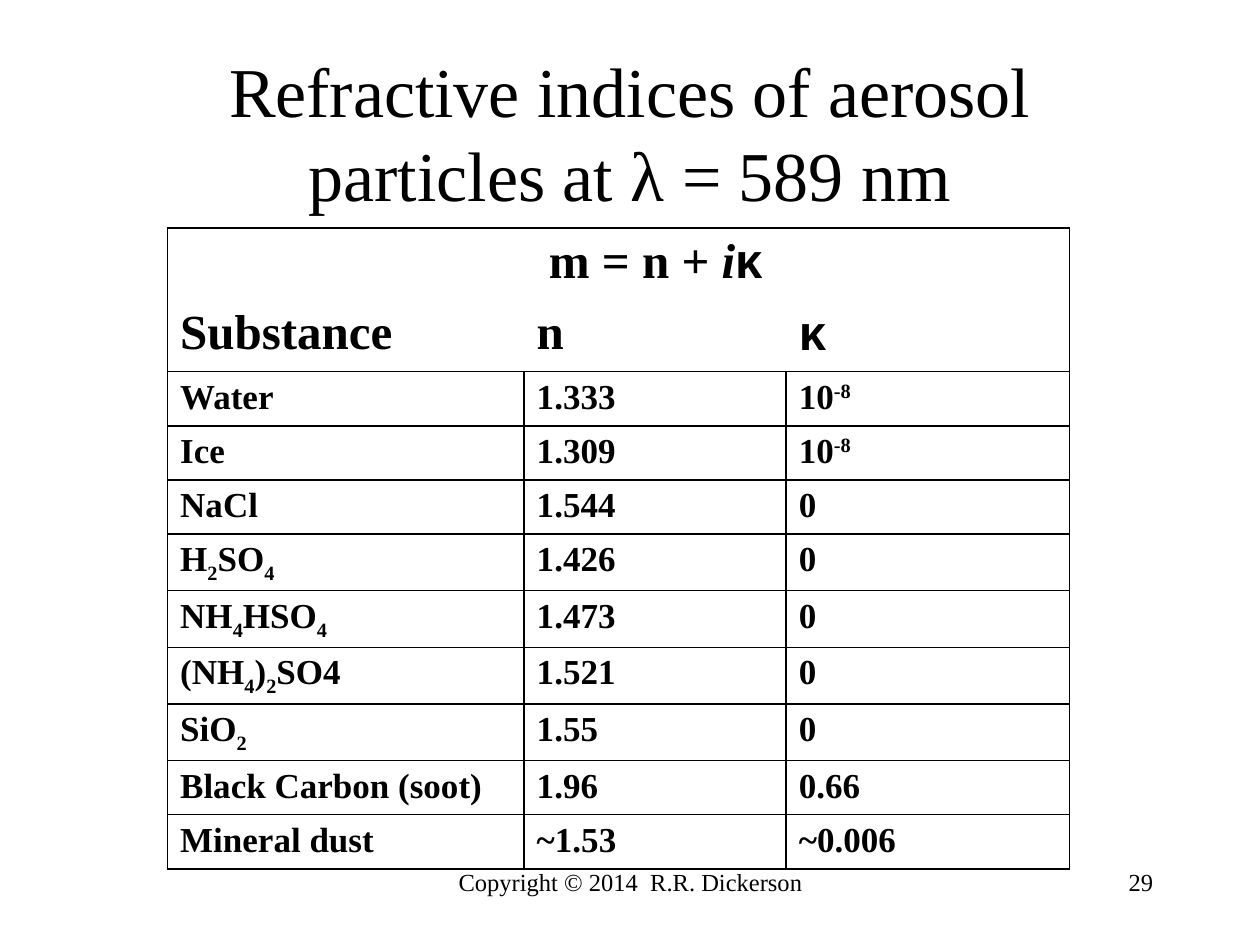
import pptx
import pptx.util
import pptx.dml.color
import pptx.enum.text
import pptx.oxml.ns
import lxml.etree

Inches, Pt = pptx.util.Inches, pptx.util.Pt
ALIGN = pptx.enum.text.PP_ALIGN
ANCHOR = pptx.enum.text.MSO_ANCHOR
COLORS = {"text": "000000", "border": "000000", "background": "FFFFFF"}
SERIF, SANS = "Times New Roman", "Arial"


def add_run(paragraph, text, size, font=SERIF, bold=False, italic=False, baseline=0):
    """Add one run; baseline is a percentage, negative for a subscript."""
    run = paragraph.add_run()
    run.text = text
    run.font.size = Pt(size)
    run.font.name = font
    run.font.bold = bold
    run.font.italic = italic
    run.font.color.rgb = pptx.dml.color.RGBColor.from_string(COLORS["text"])
    if baseline:
        run.font._element.set("baseline", str(baseline * 1000))


def set_borders(cell, visible_sides):
    """Draw the sides named in visible_sides (of L, R, T, B) and hide the others."""
    properties = cell._tc.get_or_add_tcPr()
    for side in "LRTB":
        line = lxml.etree.SubElement(properties, pptx.oxml.ns.qn("a:ln" + side), w=str(Pt(1)))
        if side in visible_sides:
            fill = lxml.etree.SubElement(line, pptx.oxml.ns.qn("a:solidFill"))
            lxml.etree.SubElement(fill, pptx.oxml.ns.qn("a:srgbClr"), val=COLORS["border"])
        else:
            lxml.etree.SubElement(line, pptx.oxml.ns.qn("a:noFill"))


presentation = pptx.Presentation()
presentation.slide_width, presentation.slide_height = Inches(10), Inches(7.5)
slide = presentation.slides.add_slide(presentation.slide_layouts[6])
slide.background.fill.solid()
slide.background.fill.fore_color.rgb = pptx.dml.color.RGBColor.from_string(COLORS["background"])

# Footer, slide number and title
captions = [
    ("Copyright © 2014  R.R. Dickerson", (3.42, 6.83, 3.17, 0.5), 14, ALIGN.CENTER, ANCHOR.TOP),
    ("29", (7.17, 6.83, 2.08, 0.5), 14, ALIGN.RIGHT, ANCHOR.TOP),
    ("Refractive indices of aerosol particles at λ = 589 nm",
     (0.75, 0.42, 8.5, 1.25), 40, ALIGN.CENTER, ANCHOR.MIDDLE),
]
for text, place, size, alignment, anchor in captions:
    frame = slide.shapes.add_textbox(*map(Inches, place)).text_frame
    frame.word_wrap = True
    frame.vertical_anchor = anchor
    frame.paragraphs[0].alignment = alignment
    add_run(frame.paragraphs[0], text, size)

# Subscripts stand between underscores, superscripts between carets
substances = [
    ("Water", "1.333", "10^-8"),
    ("Ice", "1.309", "10^-8"),
    ("NaCl", "1.544", "0"),
    ("H_2_SO_4", "1.426", "0"),
    ("NH_4_HSO_4", "1.473", "0"),
    ("(NH_4_)_2_SO4", "1.521", "0"),
    ("SiO_2", "1.55", "0"),
    ("Black Carbon (soot)", "1.96", "0.66"),
    ("Mineral dust", "~1.53", "~0.006"),
]
column_widths = [2.83, 2.08, 2.25]
row_heights = [0.57] * 2 + [0.43] * len(substances)
indices = slide.shapes.add_table(
    len(row_heights), len(column_widths), Inches(1.33), Inches(1.81),
    Inches(sum(column_widths)), Inches(sum(row_heights))).table
indices.first_row = indices.horz_banding = False
for column, width in zip(indices.columns, column_widths):
    column.width = Inches(width)
for row, height in zip(indices.rows, row_heights):
    row.height = Inches(height)

# The two heading rows share one outline without inner lines
for row_number in range(len(row_heights)):
    for column_number in range(len(column_widths)):
        cell = indices.cell(row_number, column_number)
        if row_number < 2:
            sides = ("T", "B")[row_number] + ("L", "", "R")[column_number]
        else:
            sides = "LRTB"
        set_borders(cell, sides)
        cell.fill.background()
        cell.margin_left = cell.margin_right = Inches(0.1)
        cell.margin_top = Inches(0.05)
        # A small bottom margin keeps rows with subscripts clear of the footer
        cell.margin_bottom = Inches(0.02)

formula = indices.cell(0, 1).text_frame.paragraphs[0]
add_run(formula, " m = n + ", 28, bold=True)
add_run(formula, "i", 28, bold=True, italic=True)
add_run(formula, "κ", 28, SANS, bold=True)
for column_number, (heading, font) in enumerate([("Substance", SERIF), ("n", SERIF), ("κ", SANS)]):
    paragraph = indices.cell(1, column_number).text_frame.paragraphs[0]
    add_run(paragraph, heading, 28, font, bold=True)

for row_number, values in enumerate(substances, start=2):
    for column_number, value in enumerate(values):
        paragraph = indices.cell(row_number, column_number).text_frame.paragraphs[0]
        marker, shift = ("^", 30) if "^" in value else ("_", -25)
        for position, part in enumerate(value.split(marker)):
            add_run(paragraph, part, 20, bold=True, baseline=shift * (position % 2))

presentation.save("out.pptx")
